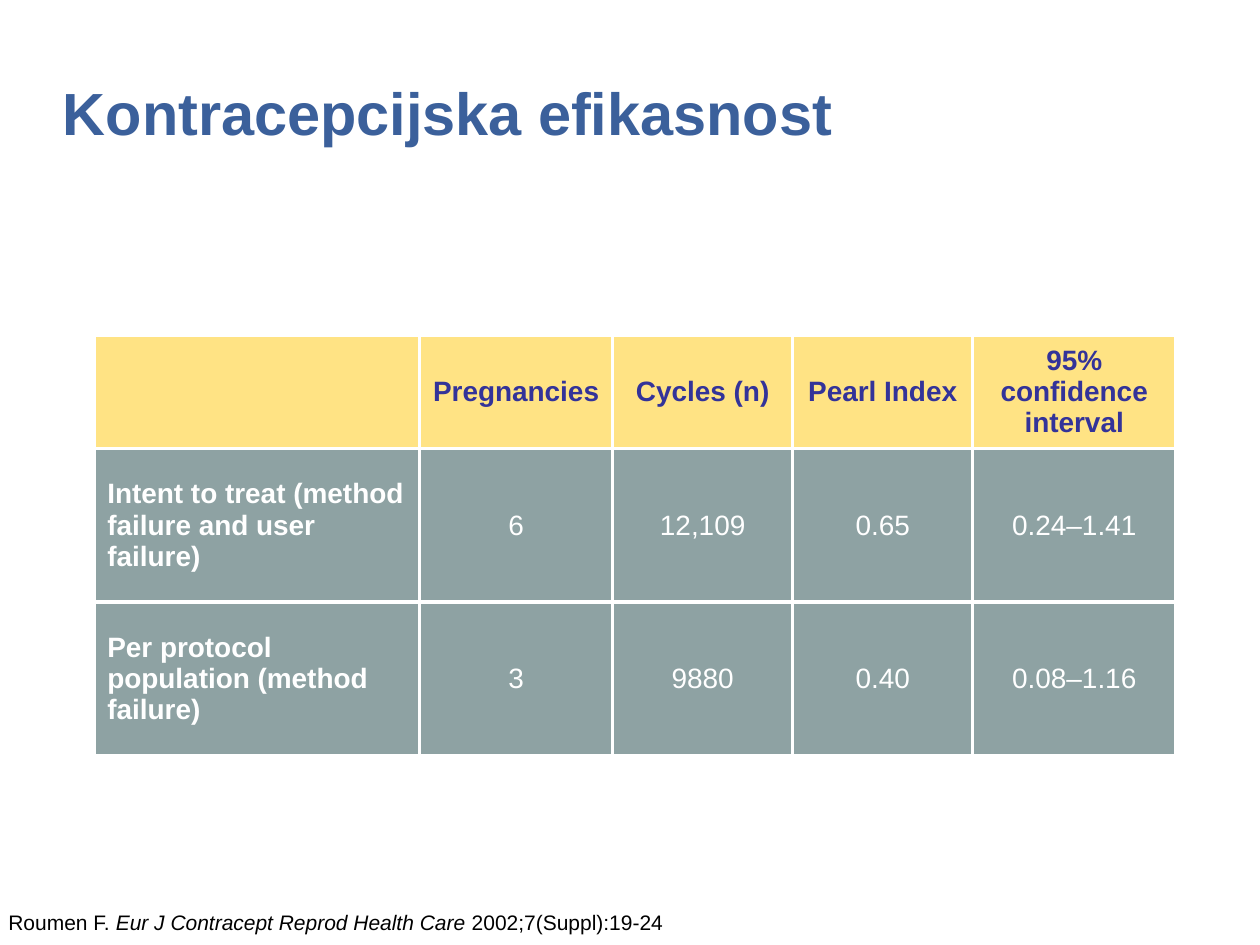
from dataclasses import dataclass

from lxml.etree import SubElement
from pptx import Presentation
from pptx.dml.color import RGBColor
from pptx.enum.shapes import MSO_SHAPE
from pptx.enum.text import MSO_ANCHOR, PP_ALIGN
from pptx.oxml import parse_xml
from pptx.oxml.ns import nsdecls, qn
from pptx.util import Cm, Pt


@dataclass(frozen=True)
class Theme:
    font: str = "Arial"
    title_color: str = "3B609B"
    header_color: str = "333399"
    header_fill: str = "FFE384"
    body_fill: str = "1E4649"
    body_opacity: int = 50
    white: str = "FFFFFF"
    black: str = "000000"
    title_size: int = 34
    table_size: int = 16
    source_size: int = 12
    border_width: float = 2.25


THEME = Theme()

HEADINGS = ["", "Pregnancies", "Cycles (n)", "Pearl Index", "95% confidence interval"]
RESULTS = [
    ["Intent to treat (method failure and user failure)", "6", "12,109", "0.65", "0.24–1.41"],
    ["Per protocol population (method failure)", "3", "9880", "0.40", "0.08–1.16"],
]
COLUMN_WIDTHS = [6.55, 3.89, 3.63, 3.63, 4.09]
ROW_HEIGHTS = [2.28, 3.09, 3.09]


def add_span(para, text, *, size, color, bold=False, italic=False):
    span = para.add_run()
    span.text = text
    span.font.name = THEME.font
    span.font.size = Pt(size)
    span.font.bold = bold
    span.font.italic = italic
    span.font.color.rgb = RGBColor.from_string(color)


def add_title(page, text):
    box = page.shapes.add_textbox(Cm(1.27), Cm(1.7), Cm(22.86), Cm(2.46))
    frame = box.text_frame
    frame.word_wrap = True
    frame.margin_left = frame.margin_right = frame.margin_top = frame.margin_bottom = 0
    para = frame.paragraphs[0]
    para.line_spacing = Pt(36)
    add_span(para, text, size=THEME.title_size, color=THEME.title_color, bold=True)


def fill_cell(cell, color, opacity=100):
    cell.fill.solid()
    cell.fill.fore_color.rgb = RGBColor.from_string(color)
    properties = cell._tc.get_or_add_tcPr()
    if opacity < 100:
        tone = properties.find(".//" + qn("a:srgbClr"))
        SubElement(tone, qn("a:alpha"), val=str(opacity * 1000))
    # Borders come before the fill in the cell properties
    for index, side in enumerate(("lnL", "lnR", "lnT", "lnB")):
        properties.insert(index, parse_xml(
            f'<a:{side} {nsdecls("a")} w="{Pt(THEME.border_width)}"><a:solidFill>'
            f'<a:srgbClr val="{THEME.white}"/></a:solidFill></a:{side}>'))


def add_results_table(page, rows):
    frame = page.shapes.add_table(
        len(rows), len(COLUMN_WIDTHS), Cm(1.91), Cm(6.76),
        Cm(sum(COLUMN_WIDTHS)), Cm(sum(ROW_HEIGHTS)))
    table = frame.table
    table.first_row = table.horz_banding = False
    for column, width in zip(table.columns, COLUMN_WIDTHS):
        column.width = Cm(width)
    for row, height in zip(table.rows, ROW_HEIGHTS):
        row.height = Cm(height)

    for row_index, texts in enumerate(rows):
        is_header = row_index == 0
        for column_index, text in enumerate(texts):
            is_label = column_index == 0
            cell = table.cell(row_index, column_index)
            cell.vertical_anchor = MSO_ANCHOR.MIDDLE
            if is_header:
                fill_cell(cell, THEME.header_fill)
            else:
                fill_cell(cell, THEME.body_fill, THEME.body_opacity)
            if text:
                para = cell.text_frame.paragraphs[0]
                para.alignment = PP_ALIGN.LEFT if is_label else PP_ALIGN.CENTER
                add_span(para, text, size=THEME.table_size, bold=is_header or is_label,
                         color=THEME.header_color if is_header else THEME.white)


def add_source(page, spans):
    box = page.shapes.add_shape(MSO_SHAPE.RECTANGLE, Cm(-0.08), Cm(18.21), Cm(18.62), Cm(0.76))
    box.shadow.inherit = False
    box.fill.solid()
    box.fill.fore_color.rgb = RGBColor.from_string(THEME.white)
    box.line.fill.background()
    frame = box.text_frame
    frame.word_wrap = True
    frame.vertical_anchor = MSO_ANCHOR.TOP
    para = frame.paragraphs[0]
    para.alignment = PP_ALIGN.LEFT
    for text, italic in spans:
        add_span(para, text, size=THEME.source_size, color=THEME.black, italic=italic)


def main():
    deck = Presentation()
    deck.slide_width, deck.slide_height = Cm(25.4), Cm(19.05)
    page = deck.slides.add_slide(deck.slide_layouts[6])

    # Heading, results and citation
    add_title(page, "Kontracepcijska efikasnost")
    add_results_table(page, [HEADINGS] + RESULTS)
    add_source(page, [
        ("Roumen F. ", False),
        ("Eur J Contracept Reprod Health Care", True),
        (" 2002;7(Suppl):19-24", False),
    ])
    deck.save("out.pptx")


if __name__ == "__main__":
    main()
